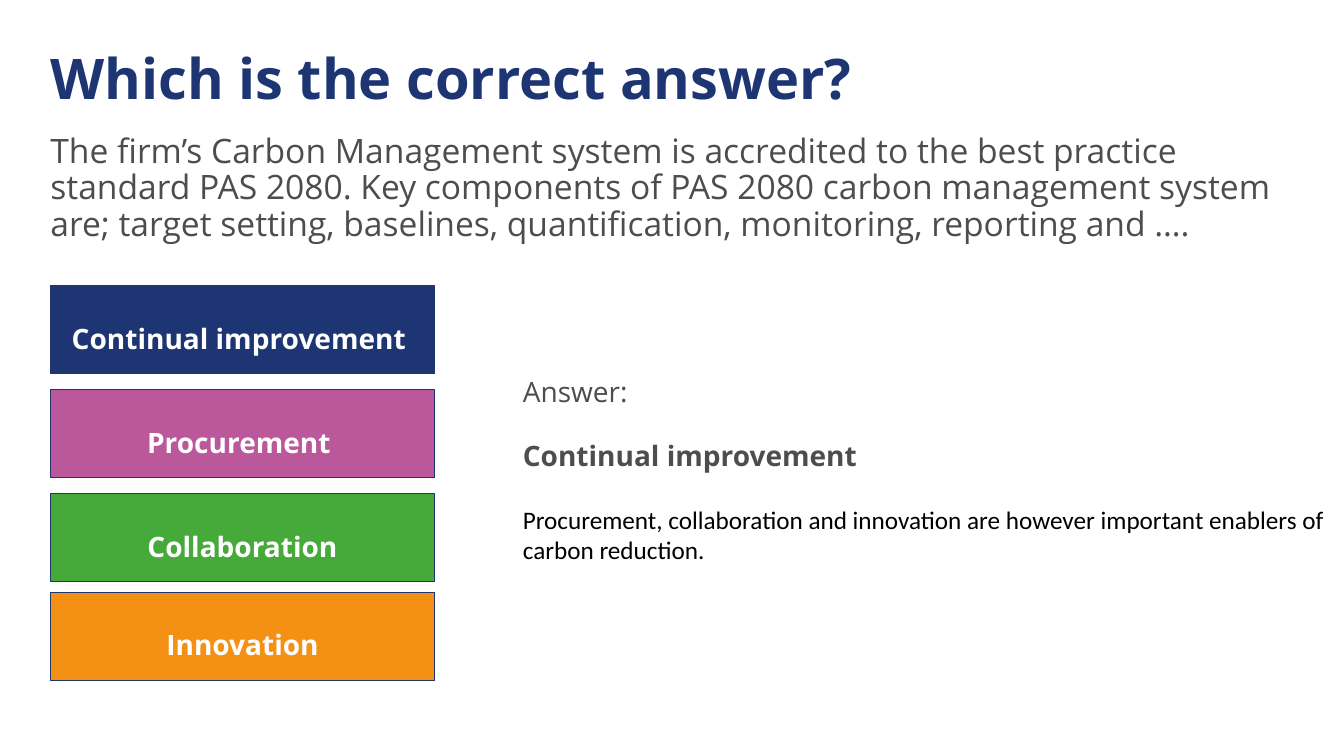
from dataclasses import dataclass

from pptx import Presentation
from pptx.dml.color import RGBColor
from pptx.enum.shapes import MSO_SHAPE
from pptx.enum.text import MSO_ANCHOR, PP_ALIGN
from pptx.util import Pt

RECTANGLE = MSO_SHAPE.RECTANGLE
TOP, MIDDLE = MSO_ANCHOR.TOP, MSO_ANCHOR.MIDDLE
LEFT, CENTER = PP_ALIGN.LEFT, PP_ALIGN.CENTER
EMU_PER_PX = 9525
TITLE_ONLY = 5


@dataclass(frozen=True)
class Theme:
    navy: str = "1D3673"
    pink: str = "BB579B"
    green: str = "45AA3A"
    orange: str = "F49114"
    grey: str = "4C4D4C"
    white: str = "FFFFFF"
    black: str = "000000"
    heading_font: str = "Open Sans"
    note_font: str = "Calibri"
    title_size: int = 40
    question_size: int = 24
    answer_size: int = 20
    note_size: int = 18


THEME = Theme()


def px(*lengths):
    return [length * EMU_PER_PX for length in lengths]


def set_attributes(target, values):
    for name, value in values.items():
        setattr(target, name, value)


def prepare_frame(frame, anchor=TOP):
    """Wrap the text and take away the inner margins."""
    set_attributes(frame, {
        "word_wrap": True, "vertical_anchor": anchor,
        "margin_left": 0, "margin_right": 0, "margin_top": 0, "margin_bottom": 0,
    })


def write_paragraph(paragraph, text, size, color, bold=False,
                    font=THEME.heading_font, **spacing):
    set_attributes(paragraph, {"alignment": LEFT, "line_spacing": 0.9, **spacing})
    run = paragraph.add_run()
    run.text = text
    set_attributes(run.font, {"name": font, "size": Pt(size), "bold": bold})
    run.font.color.rgb = RGBColor.from_string(color)


def place_title(slide, box, text):
    title = slide.shapes.title
    set_attributes(title, dict(zip(("left", "top", "width", "height"), px(*box))))
    prepare_frame(title.text_frame)
    write_paragraph(title.text_frame.paragraphs[0], text,
                    THEME.title_size, THEME.navy, bold=True)


def add_question(slide, box, text):
    frame = slide.shapes.add_textbox(*px(*box)).text_frame
    prepare_frame(frame)
    write_paragraph(frame.paragraphs[0], text, THEME.question_size, THEME.grey,
                    space_after=Pt(6))


def add_option(slide, box, text, fill):
    option = slide.shapes.add_shape(RECTANGLE, *px(*box))
    option.shadow.inherit = False
    option.fill.solid()
    option.fill.fore_color.rgb = RGBColor.from_string(fill)
    option.line.color.rgb = RGBColor.from_string(THEME.navy)
    option.line.width = Pt(1)
    set_attributes(option.text_frame, {"word_wrap": True, "vertical_anchor": MIDDLE})
    write_paragraph(option.text_frame.paragraphs[0], text, THEME.answer_size,
                    THEME.white, bold=True, alignment=CENTER, line_spacing=1.5)


def add_options(slide, box, options):
    """Stack the options; each brings its offset from the top of the box."""
    left, top, width, height = box
    for offset, text, fill in options:
        add_option(slide, (left, top + offset, width, height), text, fill)


def add_answer(slide, box, label, answer, note):
    frame = slide.shapes.add_textbox(*px(*box)).text_frame
    prepare_frame(frame)
    write_paragraph(frame.paragraphs[0], label, THEME.answer_size, THEME.grey)
    write_paragraph(frame.add_paragraph(), answer, THEME.answer_size, THEME.grey,
                    bold=True, space_before=Pt(24))
    write_paragraph(frame.add_paragraph(), note, THEME.note_size, THEME.black,
                    font=THEME.note_font, line_spacing=1.0, space_before=Pt(23))


def build_quiz_slide(presentation):
    slide = presentation.slides.add_slide(presentation.slide_layouts[TITLE_ONLY])
    place_title(slide, (48, 49, 1184, 102), "Which is the correct answer?")
    add_question(
        slide, (48, 128, 1184, 465),
        "The firm’s Carbon Management system is accredited to the best practice "
        "standard PAS 2080. Key components of PAS 2080 carbon management system "
        "are; target setting, baselines, quantification, monitoring, reporting "
        "and ….")
    add_options(slide, (48, 272, 366, 84), [
        (0, "Continual improvement ", THEME.navy),
        (99, "Procurement ", THEME.pink),
        (198, "Collaboration", THEME.green),
        (292, "Innovation", THEME.orange),
    ])
    add_answer(
        slide, (498, 360, 828, 266), "Answer:", "Continual improvement",
        "Procurement, collaboration and innovation are however important "
        "enablers of carbon reduction.")


def main():
    presentation = Presentation()
    presentation.slide_width, presentation.slide_height = px(1280, 720)
    build_quiz_slide(presentation)
    presentation.save("out.pptx")


if __name__ == "__main__":
    main()
